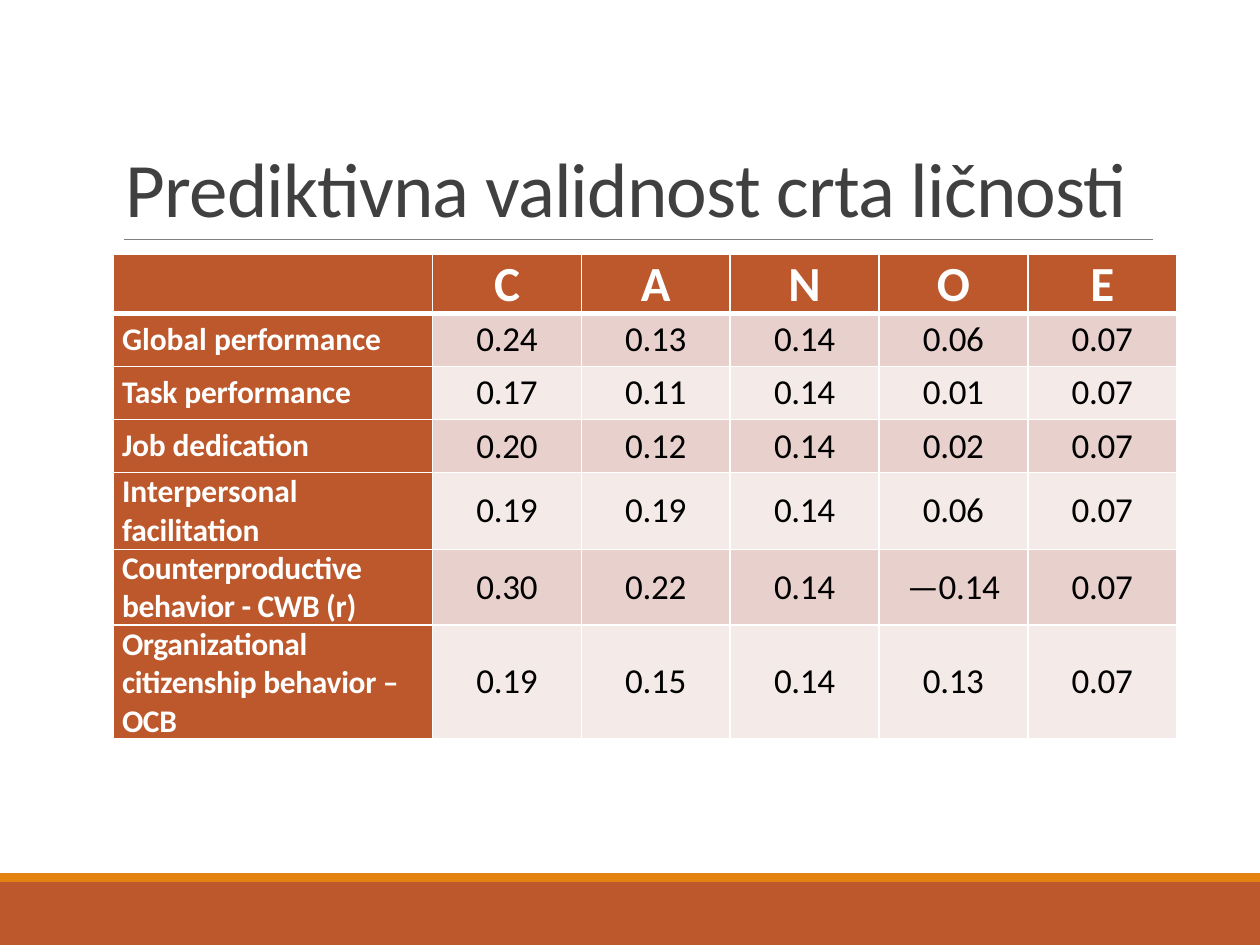
import pptx
import pptx.util
import pptx.dml.color
import pptx.enum.shapes
import pptx.enum.text
import pptx.oxml
import pptx.oxml.ns

Cm, Pt = pptx.util.Cm, pptx.util.Pt
Align = pptx.enum.text.PP_ALIGN
Anchor = pptx.enum.text.MSO_ANCHOR
hues = {"rust": "BD582C", "gold": "E48312", "rule": "808080", "title": "404040",
        "white": "FFFFFF", "black": "000000", "dark": "E8D1CD", "light": "F4EAE8"}


def tint(name):
    return pptx.dml.color.RGBColor.from_string(hues[name])


def write(para, text, size, hue, bold=False, space=0):
    run = para.add_run()
    run.text = text
    style = {"name": "Calibri", "size": Pt(size), "bold": bold}
    for key, value in style.items():
        setattr(run.font, key, value)
    run.font.color.rgb = tint(hue)
    if space:
        run.font._element.set("spc", str(round(space * 100)))


deck = pptx.Presentation()
deck.slide_width, deck.slide_height = Cm(25.4), Cm(19.05)
slide = deck.slides.add_slide(deck.slide_layouts[6])
shapes = slide.shapes

# Footer bands
for top, high, hue in [(17.78, 1.27, "rust"), (17.6, 0.18, "gold")]:
    band = shapes.add_shape(pptx.enum.shapes.MSO_SHAPE.RECTANGLE,
                            0, Cm(top), Cm(25.4), Cm(high))
    band.shadow.inherit = False
    band.fill.solid()
    band.fill.fore_color.rgb = tint(hue)
    band.line.fill.background()

# Rule under the title
rule = shapes.add_connector(pptx.enum.shapes.MSO_CONNECTOR.STRAIGHT,
                            Cm(2.49), Cm(4.83), Cm(23.24), Cm(4.83))
rule.line.width = Pt(0.5)
rule.line.color.rgb = tint("rule")
rule._element.spPr.append(pptx.oxml.parse_xml(
    f'<a:effectLst {pptx.oxml.ns.nsdecls("a")}/>'))

# Title
title = shapes.add_textbox(Cm(2.29), Cm(0.79), Cm(20.96), Cm(4.04))
frame = title.text_frame
for key, value in {"word_wrap": True, "vertical_anchor": Anchor.BOTTOM}.items():
    setattr(frame, key, value)
frame.paragraphs[0].line_spacing = 0.85
write(frame.paragraphs[0], "Prediktivna validnost crta ličnosti", 44, "title", space=-0.5)

# Table data: label runs with letter spacing, then values
heads = ["C", "A", "N", "O", "E"]
rows = [
    ([("Global ", 0), ("performance", -0.1)], "0.24 0.13 0.14 0.06 0.07"),
    ([("Task", -0.2), (" performance", -0.1)], "0.17 0.11 0.14 0.01 0.07"),
    ([("Job dedication", -0.1)], "0.20 0.12 0.14 0.02 0.07"),
    ([("Interpersonal ", 0), ("facilitation", -0.1)], "0.19 0.19 0.14 0.06 0.07"),
    ([("Counterproductive behavior - CWB (r)", -0.2)], "0.30 0.22 0.14 —0.14 0.07"),
    ([("Organizational citizenship behavior – OCB", -0.2)], "0.19 0.15 0.14 0.13 0.07"),
]

# Table grid
holder = shapes.add_table(len(rows) + 1, len(heads) + 1,
                          Cm(2.29), Cm(5.13), Cm(21.43), Cm(9.75))
table = holder.table
for col, column in enumerate(table.columns):
    column.width = Cm(3) if col else Cm(6.43)
for row, line in enumerate(table.rows):
    line.height = Cm(1.55) if row == 4 else Cm(1.07)
holder.height = Cm(9.75)

# Cell borders, fills and margins
inset = {"margin_left": Cm(0.17), "margin_right": Cm(0.17), "margin_top": 0,
         "margin_bottom": 0, "vertical_anchor": Anchor.MIDDLE}
for row in range(len(rows) + 1):
    for col in range(len(heads) + 1):
        cell = table.cell(row, col)
        for key, value in inset.items():
            setattr(cell, key, value)
        for side in "LRTB":
            thick = (row, side) in [(0, "B"), (1, "T")]
            cell._tc.get_or_add_tcPr().append(pptx.oxml.parse_xml(
                f'<a:ln{side} {pptx.oxml.ns.nsdecls("a")} w="{Pt(3 if thick else 1)}">'
                f'<a:solidFill><a:srgbClr val="{hues["white"]}"/></a:solidFill>'
                f'</a:ln{side}>'))
        cell.fill.solid()
        plain = "dark" if row % 2 else "light"
        cell.fill.fore_color.rgb = tint(plain if row and col else "rust")
        if col:
            cell.text_frame.paragraphs[0].alignment = Align.CENTER

# Cell text
for col, head in enumerate(heads, 1):
    write(table.cell(0, col).text_frame.paragraphs[0], head, 28, "white", True)
for row, (label, values) in enumerate(rows, 1):
    for text, space in label:
        write(table.cell(row, 0).text_frame.paragraphs[0], text, 18, "white", True, space)
    for col, value in enumerate(values.split(), 1):
        para = table.cell(row, col).text_frame.paragraphs[0]
        if value.startswith("—"):
            write(para, "—", 20, "black")
        write(para, value.lstrip("—"), 20, "black", space=-0.2)

deck.save("out.pptx")
